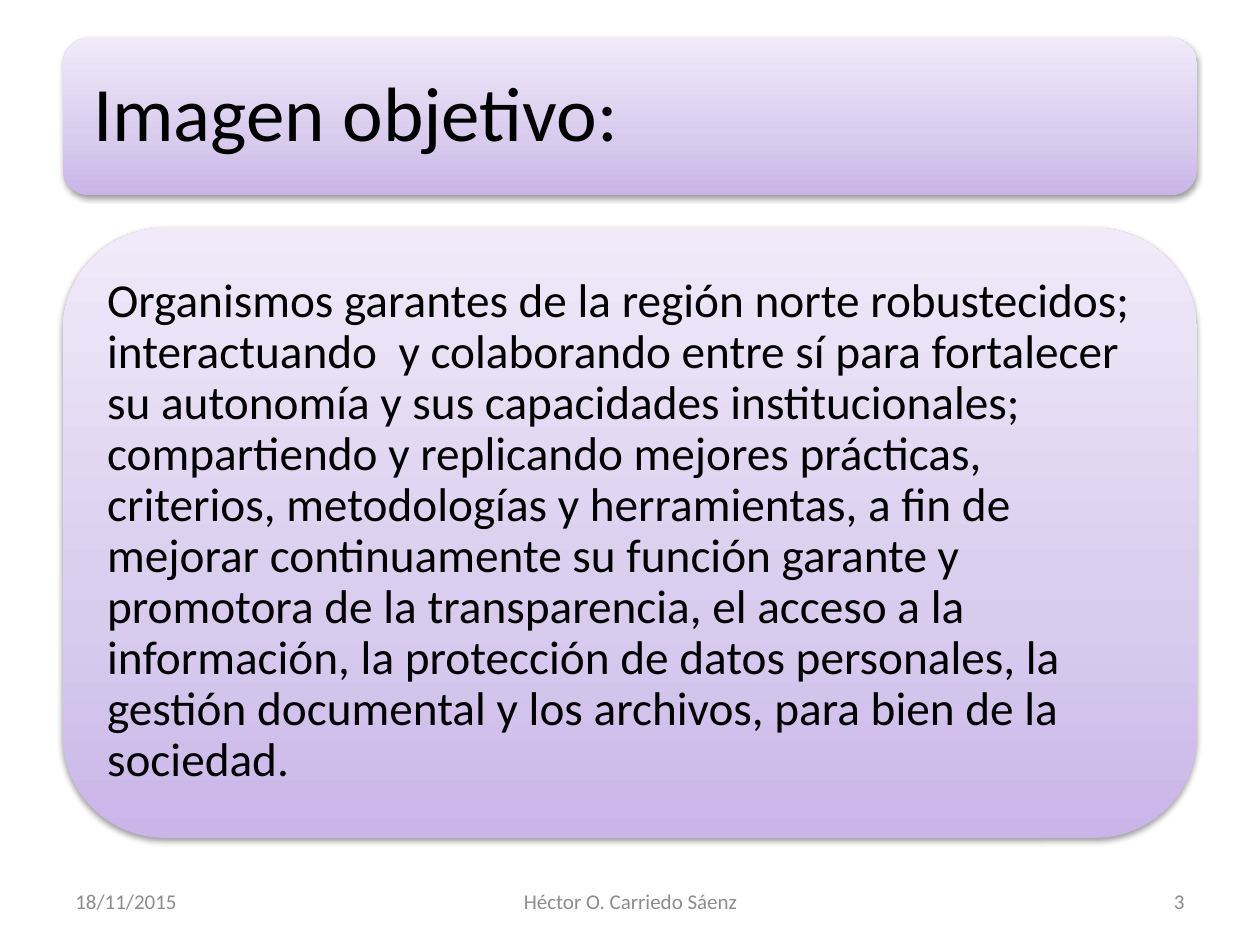
from dataclasses import dataclass

from lxml.etree import SubElement
from pptx import Presentation
from pptx.dml.color import RGBColor
from pptx.enum.shapes import MSO_SHAPE
from pptx.enum.text import MSO_ANCHOR, MSO_AUTO_SIZE, PP_ALIGN
from pptx.oxml.ns import qn
from pptx.util import Inches, Pt

BLACK = RGBColor(0x00, 0x00, 0x00)
GRAY = RGBColor(0x8C, 0x8C, 0x8C)
DEEP = RGBColor(0xC9, 0xB5, 0xE8)
LILAC = RGBColor(0xD8, 0xCB, 0xEE)
PALE = RGBColor(0xF0, 0xEA, 0xF9)
STOPS = ((0, DEEP), (35, LILAC), (100, PALE))
FONT = "Calibri"


@dataclass
class Box:
    left: float
    top: float
    width: float
    height: float

    def frame(self) -> tuple:
        return tuple(map(Inches, (self.left, self.top, self.width, self.height)))


@dataclass
class Card:
    holder: int
    outer: Box
    inner: Box
    inset: float
    size: int
    text: str


@dataclass
class Note:
    box: Box
    align: PP_ALIGN
    text: str


CARDS = (
    Card(0, Box(0.5, 0.3, 9, 1.25), Box(0.56, 0.36, 8.88, 1.13), 0.18, 44,
         "Imagen objetivo:"),
    Card(1, Box(0.5, 1.81, 9, 4.84), Box(0.74, 2.04, 8.53, 4.36), 0.11, 27,
         "Organismos garantes de la región norte robustecidos; "
         "interactuando  y colaborando entre sí para fortalecer su autonomía "
         "y sus capacidades institucionales; compartiendo y replicando mejores "
         "prácticas, criterios, metodologías y herramientas, a fin de mejorar "
         "continuamente su función garante y promotora de la transparencia, el "
         "acceso a la información, la protección de datos personales, la "
         "gestión documental y los archivos, para bien de la sociedad."),
)
NOTES = (
    Note(Box(0.5, 6.95, 2.33, 0.4), PP_ALIGN.LEFT, "18/11/2015"),
    Note(Box(3.42, 6.95, 3.17, 0.4), PP_ALIGN.CENTER, "Héctor O. Carriedo Sáenz"),
    Note(Box(7.17, 6.95, 2.33, 0.4), PP_ALIGN.RIGHT, "3"),
)


def add_tint(parent, tag: str, color: RGBColor):
    parent = SubElement(parent, qn(tag)) if tag else parent
    return SubElement(parent, qn("a:srgbClr"), val=str(color))


def add_panel(slide, box: Box):
    panel = slide.shapes.add_shape(MSO_SHAPE.ROUNDED_RECTANGLE, *box.frame())
    panel.line.fill.background()
    panel.fill.gradient()
    panel.fill.gradient_angle = 90
    props = panel._element.spPr
    stops = props.find(f".//{qn('a:gsLst')}")
    stops.clear()
    for place, color in STOPS:
        stop = SubElement(stops, qn("a:gs"), pos=str(place * 1000))
        SubElement(stop, qn("a:srgbClr"), val=str(color))
    panel.shadow.inherit = False
    shade = SubElement(props.find(qn("a:effectLst")), qn("a:outerShdw"),
                       blurRad="40000", dist="20000", dir="5400000", rotWithShape="0")
    tint = SubElement(shade, qn("a:srgbClr"), val=str(BLACK))
    SubElement(tint, qn("a:alpha"), val="38000")
    return panel


def set_text(shape, text: str, size: int, color: RGBColor, align: PP_ALIGN):
    frame = shape.text_frame
    frame.text = text
    frame.word_wrap = True
    frame.auto_size = MSO_AUTO_SIZE.NONE
    frame.vertical_anchor = MSO_ANCHOR.MIDDLE
    line = frame.paragraphs[0]
    line.alignment = align
    line.font.name = FONT
    line.font.size = Pt(size)
    line.font.color.rgb = color
    return frame


def add_card(slide, card: Card) -> None:
    panel = add_panel(slide, card.outer)
    holder = slide.placeholders[card.holder]
    holder.left, holder.top, holder.width, holder.height = card.inner.frame()
    frame = set_text(holder, card.text, card.size, BLACK, PP_ALIGN.LEFT)
    frame.margin_left = frame.margin_right = Inches(card.inset)
    frame.margin_top = frame.margin_bottom = Inches(card.inset)
    line = frame.paragraphs[0]
    line.line_spacing = 0.9
    line.space_before = Pt(0)
    props = line._p.get_or_add_pPr()
    props.set("marL", "0")
    props.set("indent", "0")
    SubElement(props, qn("a:buNone"))
    panel._element.addnext(holder._element)


def add_note(slide, note: Note) -> None:
    shape = slide.shapes.add_textbox(*note.box.frame())
    set_text(shape, note.text, 12, GRAY, note.align)


def main() -> None:
    deck = Presentation()
    deck.slide_width, deck.slide_height = Inches(10), Inches(7.5)
    slide = deck.slides.add_slide(deck.slide_layouts[1])
    for card in CARDS:
        add_card(slide, card)
    for note in NOTES:
        add_note(slide, note)
    deck.save("out.pptx")


if __name__ == "__main__":
    main()
